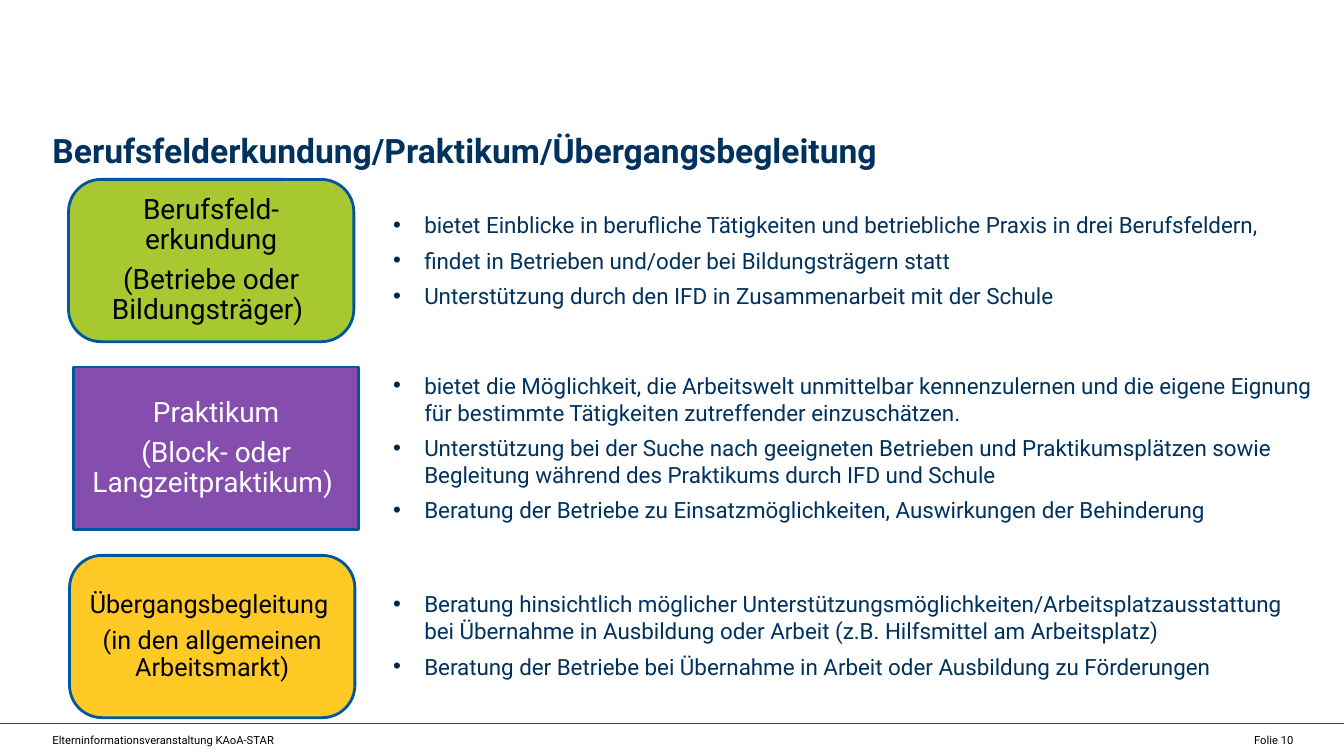
from lxml import etree
from pptx import Presentation
from pptx.dml.color import RGBColor
from pptx.enum.shapes import MSO_CONNECTOR, MSO_SHAPE
from pptx.enum.text import MSO_ANCHOR, MSO_AUTO_SIZE, PP_ALIGN
from pptx.oxml.ns import qn
from pptx.util import Inches, Pt

ROUNDED, RECTANGLE = MSO_SHAPE.ROUNDED_RECTANGLE, MSO_SHAPE.RECTANGLE
LEFT, CENTER, RIGHT = PP_ALIGN.LEFT, PP_ALIGN.CENTER, PP_ALIGN.RIGHT
TOP, MIDDLE = MSO_ANCHOR.TOP, MSO_ANCHOR.MIDDLE
NAVY, BLUE, BLACK, WHITE = "00325F", "00579D", "000000", "FFFFFF"


def color(value):
    return RGBColor.from_string(value)


def write(shape, lines, size, text_color, inset=0, anchor=TOP, bold=False, bullet=False, **formats):
    frame = shape.text_frame
    frame_formats = {"word_wrap": True, "auto_size": MSO_AUTO_SIZE.NONE, "vertical_anchor": anchor}
    for side in ("left", "right", "top", "bottom"):
        frame_formats["margin_" + side] = Inches(inset)
    if bullet:
        frame_formats.update(margin_top=Inches(0.05), margin_bottom=Inches(0.05))
    for name, value in frame_formats.items():
        setattr(frame, name, value)
    for index, line in enumerate(lines):
        paragraph = frame.add_paragraph() if index else frame.paragraphs[0]
        for name, value in formats.items():
            setattr(paragraph, name, value)
        if bullet:
            properties = paragraph._p.get_or_add_pPr()
            properties.set("marL", str(Inches(0.31)))
            properties.set("indent", str(-Inches(0.31)))
            bullet_color = etree.SubElement(properties, qn("a:buClr"))
            etree.SubElement(bullet_color, qn("a:srgbClr"), val="002547")
            etree.SubElement(properties, qn("a:buFont"), typeface="Arial")
            etree.SubElement(properties, qn("a:buChar"), char="•")
        run = paragraph.add_run()
        run.text = line
        for name, value in {"name": "Roboto", "size": Pt(size), "bold": bold}.items():
            setattr(run.font, name, value)
        run.font.color.rgb = color(text_color)


presentation = Presentation()
presentation.slide_width = Inches(13.33)
presentation.slide_height = Inches(7.5)
slide = presentation.slides.add_slide(presentation.slide_layouts[5])
shapes = slide.shapes

footer_line = shapes.add_connector(MSO_CONNECTOR.STRAIGHT, 0, Inches(7.18), Inches(13.33), Inches(7.18))
footer_line.line.color.rgb = color(BLUE)
footer_line.line.width = Pt(0.57)
etree.SubElement(footer_line._element.spPr, qn("a:effectLst"))

title = shapes.title
title_place = {"left": 0.52, "top": 1.09, "width": 12.31, "height": 0.53}
for name, value in title_place.items():
    setattr(title, name, Inches(value))
write(title, ["Berufsfelderkundung/Praktikum/Übergangsbegleitung"], 24, NAVY,
      bold=True, alignment=LEFT, line_spacing=1.5)

stages = [
    {
        "kind": ROUNDED, "left": 0.68, "top": 1.78, "fill": "98BF0C", "text_color": BLACK, "size": 20,
        "label": ["Berufsfeld-erkundung", "(Betriebe oder Bildungsträger) "],
        "list_place": (2.05, 9.53, 1.08),
        "points": [
            "bietet Einblicke in berufliche Tätigkeiten und betriebliche Praxis in drei Berufsfeldern,",
            "findet in Betrieben und/oder bei Bildungsträgern statt",
            "Unterstützung durch den IFD in Zusammenarbeit mit der Schule",
        ],
    },
    {
        "kind": RECTANGLE, "left": 0.73, "top": 3.64, "fill": "7030A0", "text_color": WHITE, "size": 20,
        "label": ["Praktikum", "(Block- oder Langzeitpraktikum) "],
        "list_place": (3.64, 9.53, 1.62),
        "points": [
            "bietet die Möglichkeit, die Arbeitswelt unmittelbar kennenzulernen und die eigene Eignung "
            "für bestimmte Tätigkeiten zutreffender einzuschätzen.",
            "Unterstützung bei der Suche nach geeigneten Betrieben und Praktikumsplätzen sowie "
            "Begleitung während des Praktikums durch IFD und Schule",
            "Beratung der Betriebe zu Einsatzmöglichkeiten, Auswirkungen der Behinderung",
        ],
    },
    {
        "kind": ROUNDED, "left": 0.69, "top": 5.51, "fill": "FFC000", "text_color": BLACK, "size": 18,
        "label": ["Übergangsbegleitung ", "(in den allgemeinen Arbeitsmarkt)"],
        "list_place": (5.81, 9.1, 0.99),
        "points": [
            "Beratung hinsichtlich möglicher Unterstützungsmöglichkeiten/Arbeitsplatzausstattung "
            "bei Übernahme in Ausbildung oder Arbeit (z.B. Hilfsmittel am Arbeitsplatz)",
            "Beratung der Betriebe bei Übernahme in Arbeit oder Ausbildung zu Förderungen",
        ],
    },
]

for stage in stages:
    box = shapes.add_shape(stage["kind"], Inches(stage["left"]), Inches(stage["top"]),
                           Inches(2.83), Inches(1.61))
    box.shadow.inherit = False
    box.fill.solid()
    box.fill.fore_color.rgb = color(stage["fill"])
    fill_color = box._element.spPr.find(qn("a:solidFill")).find(qn("a:srgbClr"))
    etree.SubElement(fill_color, qn("a:alpha"), val="85000")
    box.line.color.rgb = color(BLUE)
    box.line.width = Pt(2)
    inset = 0.18
    if stage["kind"] == ROUNDED:
        box.adjustments[0] = 0.2
        inset = 0.09
    write(box, stage["label"], stage["size"], stage["text_color"], inset=inset, anchor=MIDDLE,
          alignment=CENTER, line_spacing=0.9, space_after=Pt(stage["size"] * 0.35))

    top, width, height = stage["list_place"]
    point_list = shapes.add_textbox(Inches(3.8), Inches(top), Inches(width), Inches(height))
    write(point_list, stage["points"], 16, NAVY, inset=0.1, bullet=True, space_after=Pt(6))

footers = [
    (0.52, 8.13, "Elterninformationsveranstaltung KAoA-STAR", LEFT),
    (9.51, 3.32, "Folie 10", RIGHT),
]
for left, width, text, alignment in footers:
    footer = shapes.add_textbox(Inches(left), Inches(7.18), Inches(width), Inches(0.32))
    write(footer, [text], 8, BLACK, anchor=MIDDLE, alignment=alignment)

presentation.save("out.pptx")
